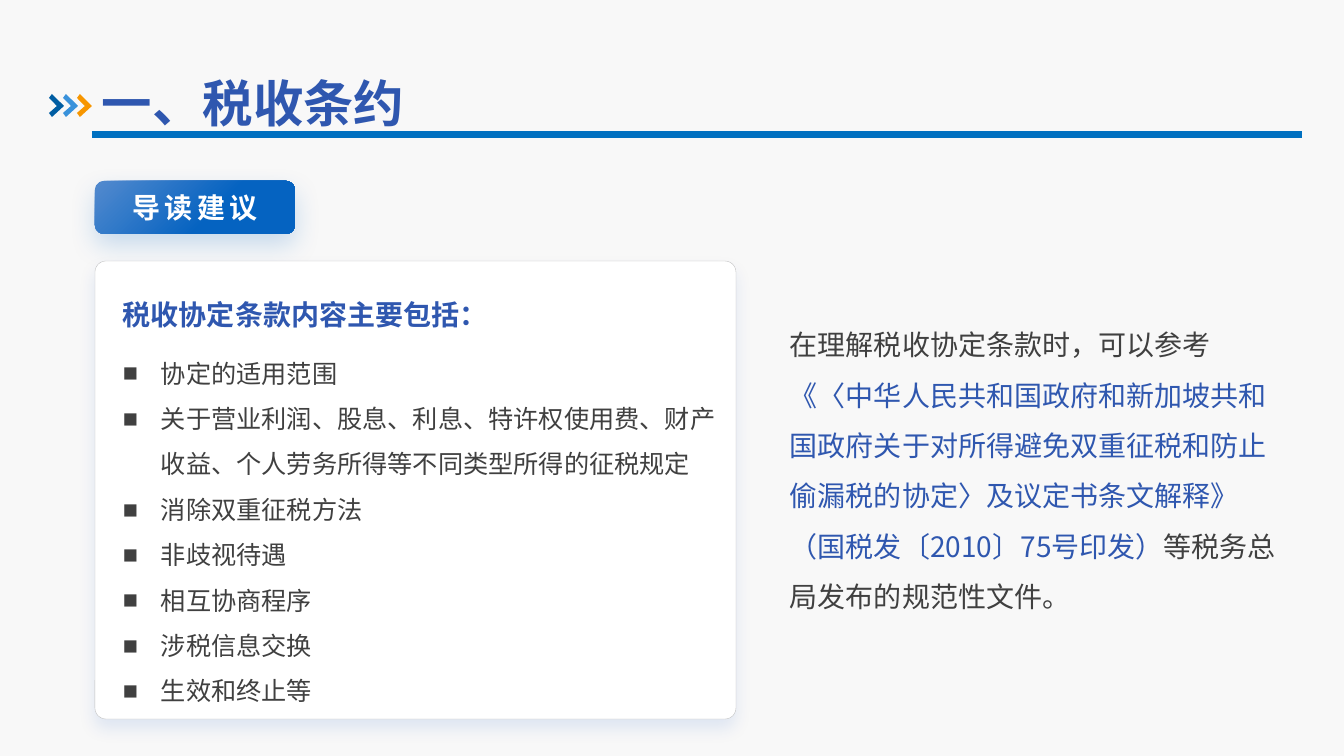
"""Build the tax treaty reading guide slide."""
from lxml import etree
from pptx import Presentation
from pptx.dml.color import RGBColor
from pptx.enum.shapes import MSO_CONNECTOR, MSO_SHAPE
from pptx.enum.text import MSO_ANCHOR, MSO_AUTO_SIZE, PP_ALIGN
from pptx.oxml.ns import qn
from pptx.util import Emu, Pt

STRAIGHT = MSO_CONNECTOR.STRAIGHT
BADGE_SHAPE = MSO_SHAPE.FLOWCHART_ALTERNATE_PROCESS
ROUNDED = MSO_SHAPE.ROUNDED_RECTANGLE
TOP, MIDDLE = MSO_ANCHOR.TOP, MSO_ANCHOR.MIDDLE
LEFT, CENTER = PP_ALIGN.LEFT, PP_ALIGN.CENTER
NO_FIT, GROW = MSO_AUTO_SIZE.NONE, MSO_AUTO_SIZE.SHAPE_TO_FIT_TEXT

PX = 914400 / 100.8
FONT = "Noto Sans CJK SC"
PAPER = RGBColor(0xF8, 0xF8, 0xF8)
WHITE = RGBColor(0xFF, 0xFF, 0xFF)
INK = RGBColor(0x40, 0x40, 0x40)
HEADING = RGBColor(0x2F, 0x57, 0xAF)
RULE = RGBColor(0x00, 0x70, 0xC0)
BADGE_LIGHT = RGBColor(0x53, 0x8A, 0xCE)
BADGE_DARK = RGBColor(0x05, 0x63, 0xC1)
CARD_EDGE = RGBColor(0xBF, 0xBF, 0xBF)
CARD_SHADOW = RGBColor(0x00, 0x48, 0xBF)
CHEVRONS = [RGBColor(0x00, 0x5D, 0xA2), RGBColor(0x39, 0x92, 0xDB),
            RGBColor(0xF7, 0x96, 0x00)]


def add_span(para, text, size, color, bold=False):
    span = para.add_run()
    span.text = text
    span.font.size = Pt(size)
    span.font.bold = bold
    span.font.color.rgb = color
    span.font.name = FONT
    etree.SubElement(span.font._element, qn("a:ea"), typeface=FONT)
    return span


def add_shadow(shape, color, percent, blur, distance):
    shape.shadow.inherit = False
    effects = shape._element.spPr.find(qn("a:effectLst"))
    shadow = etree.SubElement(
        effects, qn("a:outerShdw"), blurRad=str(Pt(blur)), dist=str(Pt(distance)),
        dir="5400000", algn="t", rotWithShape="0")
    tone = etree.SubElement(shadow, qn("a:srgbClr"), val=str(color))
    etree.SubElement(tone, qn("a:alpha"), val=str(percent * 1000))


deck = Presentation()
deck.slide_width, deck.slide_height = Emu(round(1344 * PX)), Emu(round(756 * PX))
page = deck.slides.add_slide(deck.slide_layouts[5])
page.background.fill.solid()
page.background.fill.fore_color.rgb = PAPER

rule = page.shapes.add_connector(
    STRAIGHT, *[round(v * PX) for v in (92, 135, 1302, 135)])
rule.line.color.rgb = RULE
rule.line.width = Pt(5)
etree.SubElement(rule._element.spPr, qn("a:effectLst"))

for index, color in enumerate(CHEVRONS):
    left, top = 49 + 14 * index, 94
    builder = page.shapes.build_freeform(left, top + 4, scale=PX)
    corners = [(3, 0), (15, 12), (3, 23), (0, 19), (8, 12)]
    builder.add_line_segments([(left + x, top + y) for x, y in corners])
    chevron = builder.convert_to_shape()
    chevron.fill.solid()
    chevron.fill.fore_color.rgb = color
    chevron.line.fill.background()
    chevron.shadow.inherit = False

title = page.shapes.title
title.left, title.top, title.width, title.height = [
    Emu(round(v * PX)) for v in (102, 72, 1242, 61)]
frame = title.text_frame
frame.margin_left = frame.margin_right = frame.margin_top = frame.margin_bottom = 0
frame.word_wrap = True
frame.auto_size = NO_FIT
frame.vertical_anchor = TOP
frame.paragraphs[0].alignment = LEFT
add_span(frame.paragraphs[0], "一、税收条约", 36, HEADING, True)

badge = page.shapes.add_shape(
    BADGE_SHAPE, *[round(v * PX) for v in (95, 181, 200, 53)])
badge.fill.gradient()
badge.fill.gradient_angle = 315
for stop, position, color in zip(
        badge.fill.gradient_stops, (0, 0.6), (BADGE_LIGHT, BADGE_DARK)):
    stop.position = position
    stop.color.rgb = color
badge.line.fill.background()
add_shadow(badge, BADGE_DARK, 20, 19, 8)
badge.text_frame.vertical_anchor = MIDDLE
para = badge.text_frame.paragraphs[0]
para.alignment = CENTER
span = add_span(para, "导读建议", 20, WHITE, True)
span.font._element.set("spc", "300")

card = page.shapes.add_shape(
    ROUNDED, *[round(v * PX) for v in (95, 261, 641, 458)])
card.adjustments[0] = 0.024
card.fill.solid()
card.fill.fore_color.rgb = WHITE
card.line.color.rgb = CARD_EDGE
card.line.width = Pt(0.25)
add_shadow(card, CARD_SHADOW, 10, 12, 7)

topics = ["协定的适用范围",
          "关于营业利润、股息、利息、特许权使用费、财产收益、个人劳务所得等不同类型所得的征税规定",
          "消除双重征税方法", "非歧视待遇", "相互协商程序", "涉税信息交换", "生效和终止等"]
advice = [("在理解税收协定条款时，可以参考", INK),
          ("《〈中华人民共和国政府和新加坡共和国政府关于对所得避免双重征税和防止偷漏税的协定〉"
           "及议定书条文解释》（国税发〔2010〕75号印发）", HEADING),
          ("等税务总局发布的规范性文件。", INK)]
text_boxes = [
    ((113, 276, 586, 60), 20, True, False, [[("税收协定条款内容主要包括：", HEADING)]]),
    ((113, 338, 630, 376), 18, False, True, [[(topic, INK)] for topic in topics]),
    ((780, 306, 516, 316), 20, False, False, [advice]),
]
for place, size, bold, bulleted, paragraphs in text_boxes:
    box = page.shapes.add_textbox(*[round(v * PX) for v in place])
    frame = box.text_frame
    frame.word_wrap = True
    frame.auto_size = GROW
    for index, spans in enumerate(paragraphs):
        para = frame.add_paragraph() if index else frame.paragraphs[0]
        if bulleted:
            props = para._p.get_or_add_pPr()
            indent = round(38 * PX)
            props.set("marL", str(indent))
            props.set("indent", str(-indent))
            etree.SubElement(props, qn("a:buFont"), typeface="Arial")
            etree.SubElement(props, qn("a:buChar"), char="■")
        para.line_spacing = 1.5
        for text, color in spans:
            add_span(para, text, size, color, bold)

deck.save("out.pptx")
